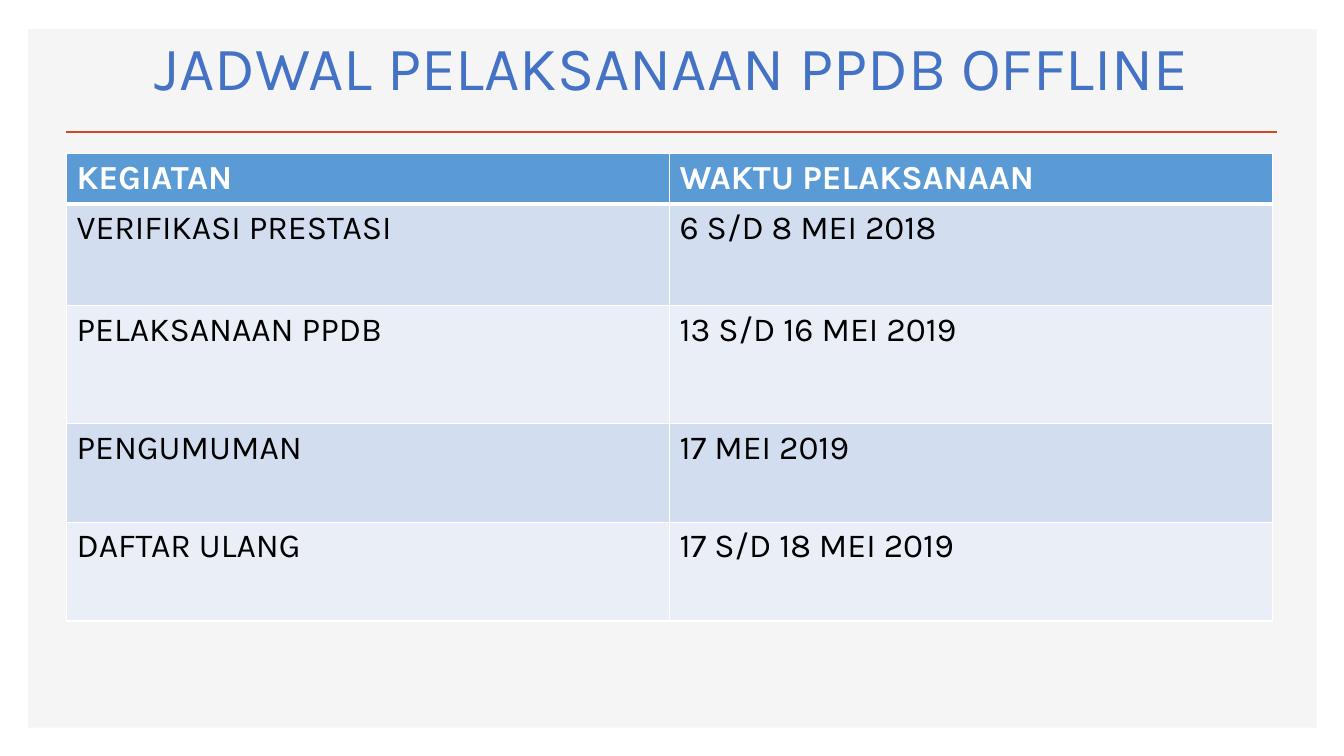
from lxml.etree import SubElement as Sub
from pptx import Presentation as Deck
from pptx.dml.color import RGBColor as Rgb
from pptx.enum.shapes import MSO_CONNECTOR as Conn, MSO_SHAPE as Kind
from pptx.enum.text import MSO_AUTO_SIZE as Fit, PP_ALIGN as Align
from pptx.oxml.ns import qn
from pptx.util import Inches, Pt

WIDE, HIGH = Inches(13.33), Inches(7.5)
FONT = "Karla"
HUES = {
    "panel": "F5F5F5",
    "rule": "D24726",
    "title": "4472C4",
    "head": "5B9BD5",
    "odd": "D2DEEF",
    "even": "EAEFF7",
    "white": "FFFFFF",
    "black": "000000",
}
PLAN = [
    ("KEGIATAN", "WAKTU PELAKSANAAN", 5.47),
    ("VERIFIKASI PRESTASI", "6 S/D 8 MEI 2018", 13.47),
    ("PELAKSANAAN PPDB", "13 S/D 16 MEI 2019", 15.6),
    ("PENGUMUMAN", "17 MEI 2019", 13.07),
    ("DAFTAR ULANG", "17 S/D 18 MEI 2019", 13.07),
]


def hue(name):
    return Rgb.from_string(HUES[name])


def across(share):
    return int(WIDE * share / 100)


def down(share):
    return int(HIGH * share / 100)


def area(left, top, width, height):
    return across(left), down(top), across(width), down(height)


def style(para, size, color, bold=False):
    font = para.font
    font.name, font.size, font.bold = FONT, Pt(size), bold
    font.color.rgb = hue(color)


def panel(slide, *place):
    shape = slide.shapes.add_shape(Kind.RECTANGLE, *area(*place))
    shape.shadow.inherit = False
    shape.fill.solid()
    shape.fill.fore_color.rgb = hue("panel")
    shape.line.fill.background()


def rule(slide, left, right, top):
    line = slide.shapes.add_connector(
        Conn.STRAIGHT, across(left), down(top), across(right), down(top))
    line.line.color.rgb = hue("rule")
    line.line.width = Pt(2)
    Sub(line._element.spPr, qn("a:effectLst"))


def title(slide, text, *place):
    frame = slide.shapes.add_textbox(*area(*place)).text_frame
    frame.word_wrap = True
    frame.auto_size = Fit.SHAPE_TO_FIT_TEXT
    para = frame.paragraphs[0]
    para.text = text
    para.alignment = Align.CENTER
    style(para, 44, "title")


def edge(cell, side, width):
    props = cell._tc.get_or_add_tcPr()
    line = Sub(props, qn(f"a:ln{side}"), w=str(Pt(width)))
    fill = Sub(line, qn("a:solidFill"))
    Sub(fill, qn("a:srgbClr"), val=HUES["white"])


def entry(cell, text, row):
    head = row == 0
    for side in "LRTB":
        thick = (head and side == "B") or (row == 1 and side == "T")
        edge(cell, side, 3 if thick else 1)
    cell.fill.solid()
    cell.fill.fore_color.rgb = hue(
        "head" if head else "odd" if row % 2 else "even")
    para = cell.text_frame.paragraphs[0]
    para.text = text
    style(para, 24, "white" if head else "black", head)


def agenda(slide, plan, left, top, width):
    tall = sum(share for *_, share in plan)
    table = slide.shapes.add_table(
        len(plan), 2, *area(left, top, width, tall)).table
    for col in table.columns:
        col.width = across(width / 2)
    for row, (*texts, share) in enumerate(plan):
        table.rows[row].height = down(share)
        for col, text in enumerate(texts):
            entry(table.cell(row, col), text, row)


def main():
    deck = Deck()
    deck.slide_width, deck.slide_height = WIDE, HIGH
    slide = deck.slides.add_slide(deck.slide_layouts[6])
    panel(slide, 2.1, 3.87, 95.87, 92.4)
    rule(slide, 4.95, 95.05, 17.47)
    title(slide, "JADWAL PELAKSANAAN PPDB OFFLINE", 5.33, 3.2, 89.35, 11.2)
    agenda(slide, PLAN, 4.95, 20.27, 89.72)
    deck.save("out.pptx")


if __name__ == "__main__":
    main()
